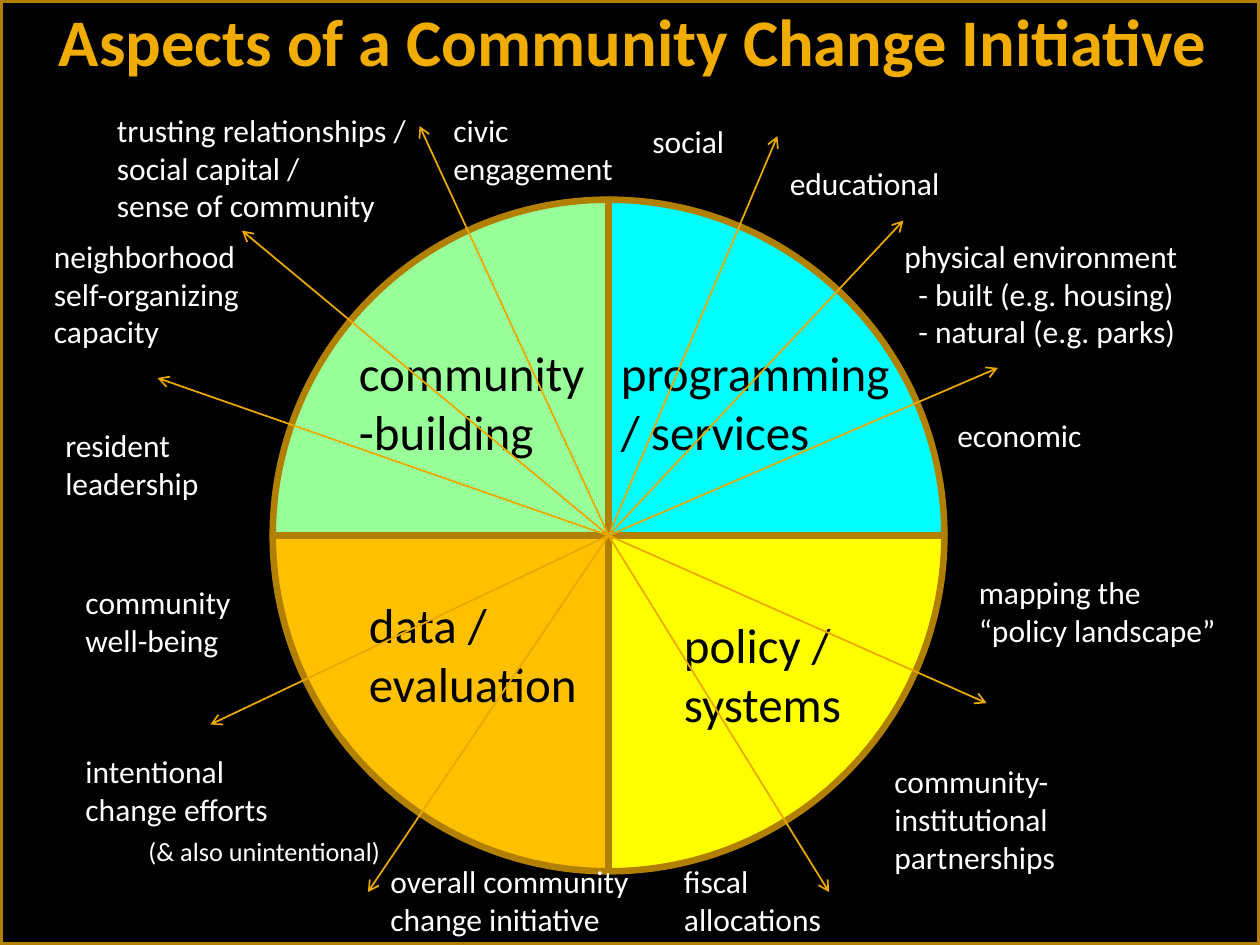
from dataclasses import dataclass

from lxml import etree
from pptx import Presentation
from pptx.dml.color import RGBColor
from pptx.enum import shapes, text
from pptx.oxml.ns import qn
from pptx.util import Inches, Pt


@dataclass(frozen=True)
class Theme:
    font: str = "Calibri"
    ground: str = "000000"
    border: str = "B28000"
    title: str = "F0AD00"
    spoke: str = "EBA900"
    light: str = "FFFFFF"
    dark: str = "000000"
    title_size: float = 38
    quadrant_size: float = 28
    label_size: float = 18
    note_size: float = 15
    border_width: float = 3.78
    spoke_width: float = 1


@dataclass(frozen=True)
class Label:
    text: str
    left: float
    top: float
    width: float
    height: float
    size: float
    color: str


@dataclass(frozen=True)
class Quadrant:
    fill: str
    label: Label


T = Theme()
CENTER = (4.83, 4.25)
DIAMETER = 5.33
ITEM_INDENT = 0.11


def quadrant(fill: str, name: str, left: float, top: float, width: float) -> Quadrant:
    return Quadrant(fill, Label(name, left, top, width, 1.04, T.quadrant_size, T.dark))


def aspect(name: str, left: float, top: float, width: float, lines: int = 2) -> Label:
    height = {1: 0.4, 2: 0.71, 3: 1.01}[lines]
    return Label(name, left, top, width, height, T.label_size, T.light)


# Clockwise from the upper left
QUADRANTS = [
    quadrant("99FF99", "community-building", 2.75, 2.67, 2.08),
    quadrant("00FFFF", "programming / services", 4.83, 2.67, 2.5),
    quadrant("FFFF00", "policy / systems", 5.33, 4.83, 2.33),
    quadrant("FFC000", "data / evaluation", 2.83, 4.67, 2.33),
]

SPOKE_ENDS = [
    (1.25, 3), (1.92, 1.83), (3.33, 1), (6.17, 1.08), (7.17, 1.75),
    (7.92, 2.92), (7.83, 5.58), (6.58, 7.08), (2.92, 7.08), (1.67, 5.75),
]

ASPECTS = [
    aspect("resident leadership", 0.42, 3.33, 1.5),
    aspect("neighborhood self-organizing capacity", 0.33, 1.83, 2, 3),
    aspect("trusting relationships /\nsocial capital /\nsense of community", 0.83, 0.83, 2.83, 3),
    aspect("civic engagement", 3.5, 0.83, 1.67),
    aspect("social", 5.08, 0.92, 0.83, 1),
    aspect("educational", 6.17, 1.25, 1.75, 1),
    aspect("physical environment\n- built (e.g. housing)\n- natural (e.g. parks)", 7.08, 1.83, 2.92, 3),
    aspect("economic", 7.5, 3.25, 1.33, 1),
    aspect("mapping the “policy landscape”", 7.67, 4.5, 2.08),
    aspect("community-institutional partnerships", 7, 6, 2.08, 3),
    aspect("fiscal allocations", 5.33, 6.79, 1.42),
    aspect("overall community change initiative", 3, 6.79, 2.25),
    aspect("intentional change efforts", 0.58, 5.92, 1.83),
    Label("(& also unintentional)", 1.08, 6.58, 2.08, 0.35, T.note_size, T.light),
    aspect("community\nwell-being", 0.58, 4.58, 1.42),
]


def rgb(color: str) -> RGBColor:
    return RGBColor.from_string(color)


def style_font(font, size: float, color: str, bold: bool = False) -> None:
    font.name, font.size, font.bold = T.font, Pt(size), bold
    font.color.rgb = rgb(color)


def add_filled(s, kind, left: float, top: float, width: float, height: float, fill: str):
    sp = s.shapes.add_shape(kind, Inches(left), Inches(top), Inches(width), Inches(height))
    sp.shadow.inherit = False
    sp.fill.solid()
    sp.fill.fore_color.rgb = rgb(fill)
    sp.line.color.rgb = rgb(T.border)
    sp.line.width = Pt(T.border_width)
    return sp


def add_title(s, name: str) -> None:
    sp = s.shapes.title
    sp.left, sp.top, sp.width, sp.height = 0, 0, Inches(10), Inches(0.83)
    tf = sp.text_frame
    tf.text = name
    tf.margin_left, tf.margin_right = Inches(0.1), Inches(0.05)
    tf.margin_top = tf.margin_bottom = 0
    tf.vertical_anchor = text.MSO_ANCHOR.TOP
    p = tf.paragraphs[0]
    p.alignment = text.PP_ALIGN.CENTER
    style_font(p.font, T.title_size, T.title, bold=True)


def add_quarter(s, fill: str, turn: int) -> None:
    left, top = (c - DIAMETER / 2 for c in CENTER)
    sp = add_filled(s, shapes.MSO_SHAPE.BLOCK_ARC, left, top, DIAMETER, DIAMETER, fill)
    for i, value in enumerate((108, 162, 0.497)):
        sp.adjustments[i] = value
    sp.rotation = 90 * turn


def add_label(s, label: Label) -> None:
    """Add a wrapped text box; lines that start with a dash are indented."""
    box = (label.left, label.top, label.width, label.height)
    tf = s.shapes.add_textbox(*map(Inches, box)).text_frame
    tf.word_wrap = True
    tf.auto_size = text.MSO_AUTO_SIZE.SHAPE_TO_FIT_TEXT
    tf.text = label.text
    for p in tf.paragraphs:
        style_font(p.font, label.size, label.color)
        if p.text.startswith("- "):
            p._p.get_or_add_pPr().set("marL", str(Inches(ITEM_INDENT)))


def add_spoke(s, x: float, y: float) -> None:
    line = s.shapes.add_connector(
        shapes.MSO_CONNECTOR.STRAIGHT, *map(Inches, (*CENTER, x, y)))
    line.line.color.rgb = rgb(T.spoke)
    line.line.width = Pt(T.spoke_width)
    etree.SubElement(line.line._get_or_add_ln(), qn("a:tailEnd"), type="arrow")
    etree.SubElement(line._element.spPr, qn("a:effectLst"))


def main() -> None:
    prs = Presentation()
    prs.slide_width, prs.slide_height = Inches(10), Inches(7.5)
    s = prs.slides.add_slide(prs.slide_layouts.get_by_name("Title Only"))

    frame = add_filled(s, shapes.MSO_SHAPE.RECTANGLE, 0, 0, 10, 7.5, T.ground)
    s.shapes.title.element.addprevious(frame.element)
    add_title(s, "Aspects of a Community Change Initiative")

    for turn, q in enumerate(QUADRANTS):
        add_quarter(s, q.fill, turn)
    for q in QUADRANTS:
        add_label(s, q.label)
    for end in SPOKE_ENDS:
        add_spoke(s, *end)
    for label in ASPECTS:
        add_label(s, label)

    prs.save("out.pptx")


if __name__ == "__main__":
    main()
